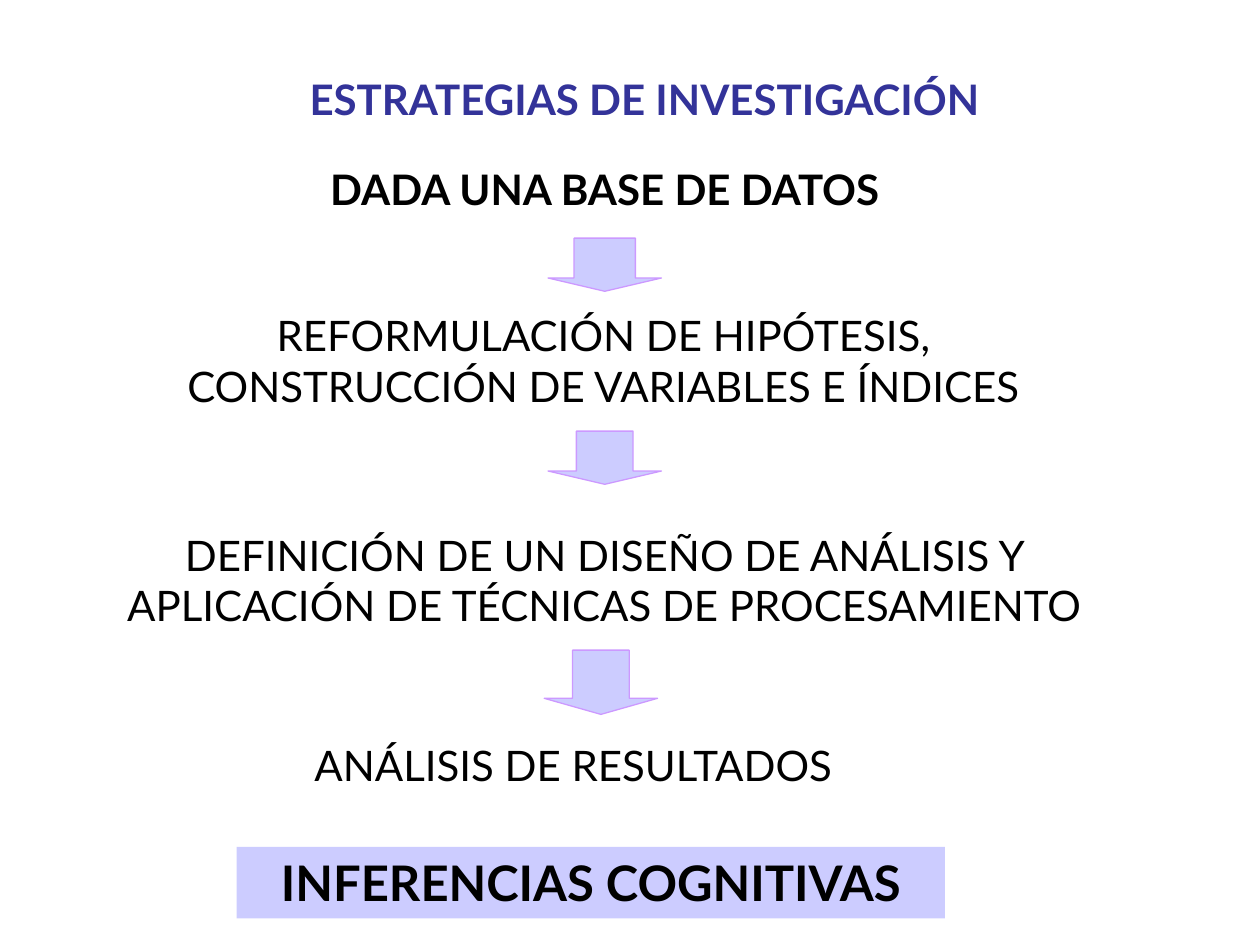
from pptx import Presentation
from pptx.dml.color import RGBColor
from pptx.enum.shapes import MSO_SHAPE
from pptx.enum.text import MSO_ANCHOR, PP_ALIGN
from pptx.util import Pt

BLACK = RGBColor(0x00, 0x00, 0x00)
INDIGO = RGBColor(0x33, 0x33, 0x99)
LAVENDER = RGBColor(0xCC, 0xCC, 0xFF)
VIOLET = RGBColor(0xCC, 0x99, 0xFF)


def write_text(sp, text, font="Lato", size=24, color=BLACK, bold=False,
               anchor=MSO_ANCHOR.TOP):
    tf = sp.text_frame
    tf.word_wrap = True
    tf.vertical_anchor = anchor
    p = tf.paragraphs[0]
    p.alignment = PP_ALIGN.CENTER
    r = p.add_run()
    r.text = text
    r.font.name = font
    r.font.size = Pt(size)
    r.font.bold = bold
    r.font.color.rgb = color


class FlowSlide:
    def __init__(self, s, font="Lato", fill=LAVENDER, line=VIOLET):
        self.s = s
        self.font = font
        self.fill = fill
        self.line = line

    def label(self, text, box, **fmt):
        sp = self.s.shapes.add_textbox(*map(Pt, box))
        write_text(sp, text, font=self.font, **fmt)

    def shape(self, kind, box):
        sp = self.s.shapes.add_shape(kind, *map(Pt, box))
        sp.shadow.inherit = False
        sp.fill.solid()
        sp.fill.fore_color.rgb = self.fill
        return sp

    def banner(self, text, box, **fmt):
        sp = self.shape(MSO_SHAPE.RECTANGLE, box)
        sp.line.fill.background()
        write_text(sp, text, font=self.font, **fmt)

    def arrow(self, box, shaft=0.5):
        sp = self.shape(MSO_SHAPE.DOWN_ARROW, box)
        sp.adjustments[0] = shaft
        sp.adjustments[1] = 0.25
        sp.line.color.rgb = self.line
        sp.line.width = Pt(0.75)


def main():
    prs = Presentation()
    prs.slide_width = Pt(720)
    prs.slide_height = Pt(540)
    flow = FlowSlide(prs.slides.add_slide(prs.slide_layouts[6]))

    flow.label("DADA UNA BASE DE DATOS", (39.6, 82.1, 612, 51.1),
               bold=True, anchor=MSO_ANCHOR.MIDDLE)
    steps = [
        ("REFORMULACIÓN DE HIPÓTESIS, CONSTRUCCIÓN DE VARIABLES E ÍNDICES",
         (84.2, 173.5, 521.3, 65.5)),
        ("DEFINICIÓN DE UN DISEÑO DE ANÁLISIS Y APLICACIÓN DE TÉCNICAS "
         "DE PROCESAMIENTO", (53.3, 298.8, 583.9, 65.5)),
        ("ANÁLISIS DE RESULTADOS", (39.6, 419, 576, 36.7)),
    ]
    for text, box in steps:
        flow.label(text, box)
    flow.banner("INFERENCIAS COGNITIVAS", (135.2, 483.9, 404.8, 41),
                size=28, bold=True)

    flow.arrow((313.2, 136.1, 64.8, 30.4), shaft=0.54)
    flow.arrow((313.2, 246.4, 64.8, 30.4))
    flow.arrow((311, 371.5, 64.8, 36.7))

    flow.label("ESTRATEGIAS DE INVESTIGACIÓN", (77, 38.2, 582.5, 36.7),
               color=INDIGO, bold=True)
    prs.save("out.pptx")


if __name__ == "__main__":
    main()
